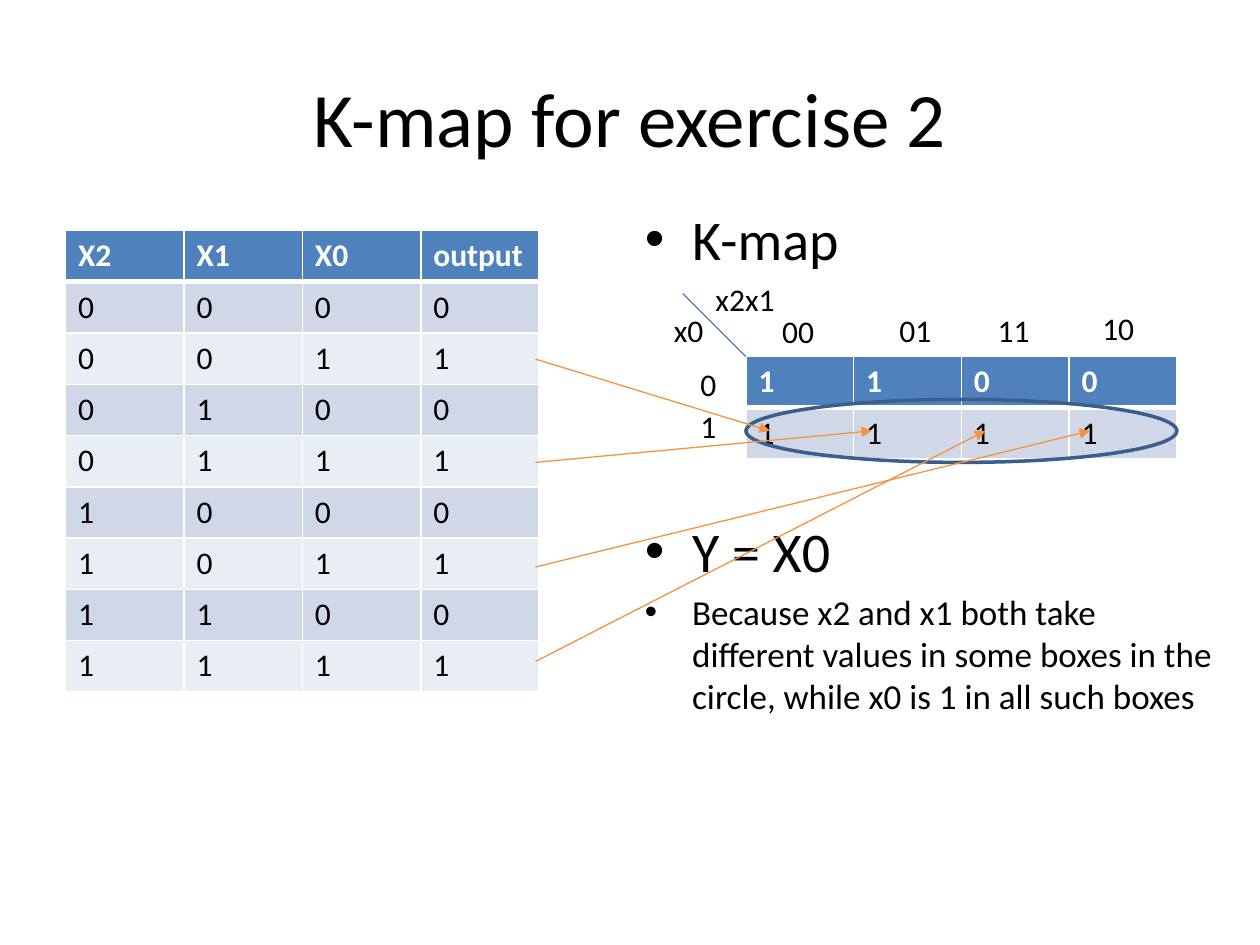
from pptx import Presentation
from pptx.dml.color import RGBColor
from pptx.enum.shapes import MSO_CONNECTOR, MSO_SHAPE
from pptx.enum.text import MSO_ANCHOR, PP_ALIGN
from pptx.oxml.ns import qn
from pptx.util import Inches, Pt
from lxml.etree import SubElement

FONT = "Calibri"
COLORS = {
    "text": "000000", "white": "FFFFFF", "header": "4F81BD",
    "odd": "D0D8E8", "even": "E9EDF4",
    "diagonal": "4B7EBC", "ring": "3A5F8C", "arrow": "F69240",
}
ROW_HEIGHT = 0.407
KMAP_LEFT, KMAP_TOP, KMAP_COL = 5.92, 2.83, 0.855

TRUTH_ROWS = [["X2", "X1", "X0", "output"]] + [
    [str(x2), str(x1), str(x0), str(x0)]
    for x2 in (0, 1) for x1 in (0, 1) for x0 in (0, 1)
]
KMAP_ROWS = [list("1100"), list("1111")]
KMAP_LABELS = [
    ("00", 6.11, 2.43), ("01", 7.04, 2.42), ("11", 7.82, 2.42), ("10", 8.65, 2.4),
    ("0", 5.46, 2.85), ("1", 5.46, 3.18), ("x2x1", 5.58, 2.17), ("x0", 5.25, 2.42),
]
ARROWS = [
    ((4.25, 2.85), (6.11, 3.42)), ((4.25, 3.67), (6.92, 3.42)),
    ((4.25, 4.5), (8.65, 3.42)), ((4.25, 5.25), (7.82, 3.42)),
]
# text, size, space before
BULLETS = [
    ("K-map", 32, 0),
    ("Y = X0", 32, 140),
    ("Because x2 and x1 both take different values in some boxes in the circle, "
     "while x0 is 1 in all such boxes", 20, 4),
]


def rgb(name):
    return RGBColor.from_string(COLORS[name])


def write(para, text, size=18, color="text", bold=False, align=PP_ALIGN.LEFT, before=0):
    para.alignment = align
    para.space_before = Pt(before)
    span = para.add_run()
    span.text = text
    font = span.font
    font.name, font.size, font.bold = FONT, Pt(size), bold
    font.color.rgb = rgb(color)


def add_bullet(para, indent=0.375):
    props = para._p.get_or_add_pPr()
    props.set("marL", str(Inches(indent)))
    props.set("indent", str(-Inches(indent)))
    SubElement(props, qn("a:buFont"), typeface="Arial")
    SubElement(props, qn("a:buChar"), char="•")


def add_title(page, text):
    title = page.shapes.title
    title.left, title.top = Inches(0.5), Inches(0.3)
    title.width, title.height = Inches(9), Inches(1.25)
    title.text_frame.vertical_anchor = MSO_ANCHOR.MIDDLE
    write(title.text_frame.paragraphs[0], text, size=44, align=PP_ALIGN.CENTER)


def add_bullets(page):
    box = page.shapes.add_textbox(Inches(5.02), Inches(1.57), Inches(4.75), Inches(4.95))
    frame = box.text_frame
    frame.word_wrap = True
    for index, (text, size, before) in enumerate(BULLETS):
        para = frame.add_paragraph() if index else frame.paragraphs[0]
        write(para, text, size=size, before=before)
        add_bullet(para)


def add_label(page, text, left, top):
    width = 0.2 + 0.13 * len(text)
    box = page.shapes.add_textbox(Inches(left), Inches(top), Inches(width), Inches(0.4))
    box.text_frame.word_wrap = False
    write(box.text_frame.paragraphs[0], text)


def set_borders(cell, top, bottom):
    """Draw white cell borders; side borders are 1 pt."""
    props = cell._tc.get_or_add_tcPr()
    for index, (tag, width) in enumerate(
            [("a:lnL", 1), ("a:lnR", 1), ("a:lnT", top), ("a:lnB", bottom)]):
        line = props.makeelement(qn(tag), {"w": str(Pt(width))})
        fill = SubElement(line, qn("a:solidFill"))
        SubElement(fill, qn("a:srgbClr"), val=COLORS["white"])
        props.insert(index, line)


def add_banded_table(page, rows, left, top, col_width):
    count = len(rows[0])
    table = page.shapes.add_table(
        len(rows), count, Inches(left), Inches(top),
        Inches(col_width * count), Inches(ROW_HEIGHT * len(rows))).table
    for column in table.columns:
        column.width = Inches(col_width)
    for r, values in enumerate(rows):
        table.rows[r].height = Inches(ROW_HEIGHT)
        header = r == 0
        fill = "header" if header else "odd" if r % 2 else "even"
        for c, value in enumerate(values):
            cell = table.cell(r, c)
            cell.fill.solid()
            cell.fill.fore_color.rgb = rgb(fill)
            set_borders(cell, top=3 if r == 1 else 1, bottom=3 if header else 1)
            write(cell.text_frame.paragraphs[0], value,
                  color="white" if header else "text", bold=header)


def add_line(page, start, end, color, arrow=False):
    line = page.shapes.add_connector(
        MSO_CONNECTOR.STRAIGHT, *(Inches(value) for value in start + end))
    line.line.color.rgb = rgb(color)
    line.line.width = Pt(0.75)
    if arrow:
        SubElement(line.line._get_or_add_ln(), qn("a:tailEnd"), type="triangle")
    SubElement(line._element.spPr, qn("a:effectLst"))


def add_ring(page):
    ring = page.shapes.add_shape(
        MSO_SHAPE.OVAL, Inches(KMAP_LEFT), Inches(3.17), Inches(4 * KMAP_COL), Inches(0.5))
    ring.shadow.inherit = False
    ring.fill.background()
    ring.line.color.rgb = rgb("ring")
    ring.line.width = Pt(2)


def main():
    deck = Presentation()
    deck.slide_width, deck.slide_height = Inches(10), Inches(7.5)
    page = deck.slides.add_slide(deck.slide_layouts[5])
    add_title(page, "K-map for exercise 2")
    add_bullets(page)
    add_banded_table(page, KMAP_ROWS, KMAP_LEFT, KMAP_TOP, KMAP_COL)
    for label in KMAP_LABELS:
        add_label(page, *label)
    add_line(page, (5.42, 2.33), (KMAP_LEFT, KMAP_TOP), "diagonal")
    add_ring(page)
    add_banded_table(page, TRUTH_ROWS, 0.52, 1.83, 0.94)
    for start, end in ARROWS:
        add_line(page, start, end, "arrow", arrow=True)
    deck.save("out.pptx")


if __name__ == "__main__":
    main()
